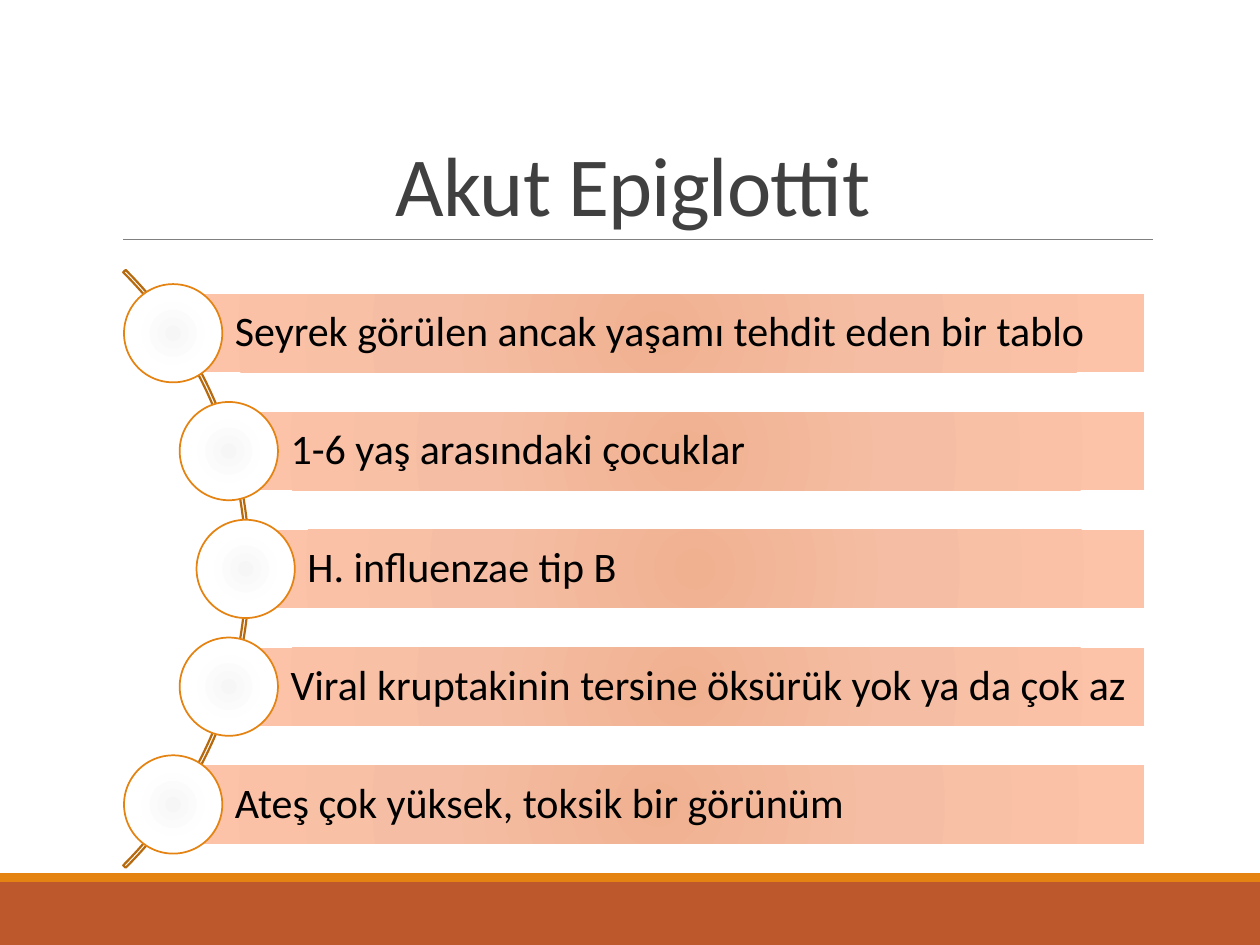
"""Build the Akut Epiglottit slide: five facts strung along an arc."""
from math import sqrt

from lxml.etree import SubElement
from pptx import Presentation
from pptx.dml.color import RGBColor
from pptx.enum.shapes import MSO_CONNECTOR, MSO_SHAPE
from pptx.enum.text import MSO_ANCHOR, PP_ALIGN
from pptx.oxml.ns import qn
from pptx.util import Inches, Pt

TITLE = "Akut Epiglottit"
FACTS = [
    "Seyrek görülen ancak yaşamı tehdit eden bir tablo",
    "1-6 yaş arasındaki çocuklar",
    "H. influenzae tip B",
    "Viral kruptakinin tersine öksürük yok ya da çok az",
    "Ateş çok yüksek, toksik bir görünüm",
]
COLORS = {"footer": "BD582C", "accent": "E48312", "rule": "808080",
          "title": "404040", "arc": "B7690E", "fact": "000000"}
BAR_STOPS = [(0, "F0B191"), (45, "F5BEA4"), (100, "FDC3A8")]
NODE_STOPS = [(0, "F6F6F6"), (45, "FEFEFE"), (100, "FFFFFF")]
FOOTER_BANDS = [("footer", 7, 0.5), ("accent", 6.93, 0.07)]

ARC_X, ARC_Y, ARC_SIZE = -1.375, 4.515, 6.71
NODE_ORBIT, NODE_SIZE = 3.325, 0.78
BAR_RIGHT, BAR_HEIGHT, STEP = 9.08, 0.62, 0.935


def rgb(name):
    return RGBColor.from_string(COLORS[name])


def add_shape(slide, preset, left, top, width, height, line=None, weight=1):
    shape = slide.shapes.add_shape(
        preset, Inches(left), Inches(top), Inches(width), Inches(height))
    shape.shadow.inherit = False
    shape.fill.background()
    if line:
        shape.line.color.rgb = rgb(line)
        shape.line.width = Pt(weight)
    else:
        shape.line.fill.background()
    return shape


def fill_radial(shape, stops):
    properties = shape._element.spPr
    empty = properties.find(qn("a:noFill"))
    gradient = SubElement(properties, qn("a:gradFill"), rotWithShape="1")
    properties.replace(empty, gradient)
    stop_list = SubElement(gradient, qn("a:gsLst"))
    for position, color in stops:
        stop = SubElement(stop_list, qn("a:gs"), pos=str(position * 1000))
        SubElement(stop, qn("a:srgbClr"), val=color)
    radial = SubElement(gradient, qn("a:path"), path="circle")
    SubElement(radial, qn("a:fillToRect"), dict.fromkeys("ltrb", "100000"))


def write(shape, text, size, color, align, spacing, frame_format):
    frame = shape.text_frame
    for name, value in {"word_wrap": True, **frame_format}.items():
        setattr(frame, name, value)
    paragraph = frame.paragraphs[0]
    paragraph.alignment = align
    paragraph.line_spacing = spacing
    run = paragraph.add_run()
    run.text = text
    font_format = {"name": "Calibri", "size": Pt(size)}
    for name, value in font_format.items():
        setattr(run.font, name, value)
    run.font.color.rgb = rgb(color)
    return run


def add_frame(slide):
    for color, top, height in FOOTER_BANDS:
        band = add_shape(slide, MSO_SHAPE.RECTANGLE, 0, top, 10, height)
        band.fill.solid()
        band.fill.fore_color.rgb = rgb(color)
    rule = slide.shapes.add_connector(
        MSO_CONNECTOR.STRAIGHT, Inches(0.98), Inches(1.9), Inches(9.15), Inches(1.9))
    rule.line.color.rgb = rgb("rule")
    rule.line.width = Pt(0.5)
    SubElement(rule._element.spPr, qn("a:effectLst"))
    title = slide.shapes.add_textbox(
        Inches(0.9), Inches(0.31), Inches(8.25), Inches(1.59))
    run = write(title, TITLE, 48, "title", PP_ALIGN.CENTER, 0.85,
                {"vertical_anchor": MSO_ANCHOR.BOTTOM})
    run.font._element.set("spc", "-50")


def add_facts(slide):
    arc = add_shape(slide, MSO_SHAPE.BLOCK_ARC, ARC_X - ARC_SIZE / 2,
                    ARC_Y - ARC_SIZE / 2, ARC_SIZE, ARC_SIZE, "arc", 1.25)
    for index, value in enumerate((189, 27, 0.004)):
        arc.adjustments[index] = value
    bar_format = {"vertical_anchor": MSO_ANCHOR.MIDDLE, "margin_left": Inches(0.49)}
    for side in ("top", "right", "bottom"):
        bar_format[f"margin_{side}"] = Inches(0.07)
    for index, fact in enumerate(FACTS):
        offset = (index - (len(FACTS) - 1) / 2) * STEP
        x = ARC_X + sqrt(NODE_ORBIT ** 2 - offset ** 2)
        y = ARC_Y + offset
        bar = add_shape(slide, MSO_SHAPE.RECTANGLE, x, y - BAR_HEIGHT / 2,
                        BAR_RIGHT - x, BAR_HEIGHT)
        fill_radial(bar, BAR_STOPS)
        write(bar, fact, 24, "fact", PP_ALIGN.LEFT, 0.9, bar_format)
        node = add_shape(slide, MSO_SHAPE.OVAL, x - NODE_SIZE / 2,
                         y - NODE_SIZE / 2, NODE_SIZE, NODE_SIZE, "accent")
        fill_radial(node, NODE_STOPS)


def main():
    deck = Presentation()
    deck.slide_width, deck.slide_height = Inches(10), Inches(7.5)
    slide = deck.slides.add_slide(deck.slide_layouts[6])
    add_frame(slide)
    add_facts(slide)
    deck.save("out.pptx")


if __name__ == "__main__":
    main()
